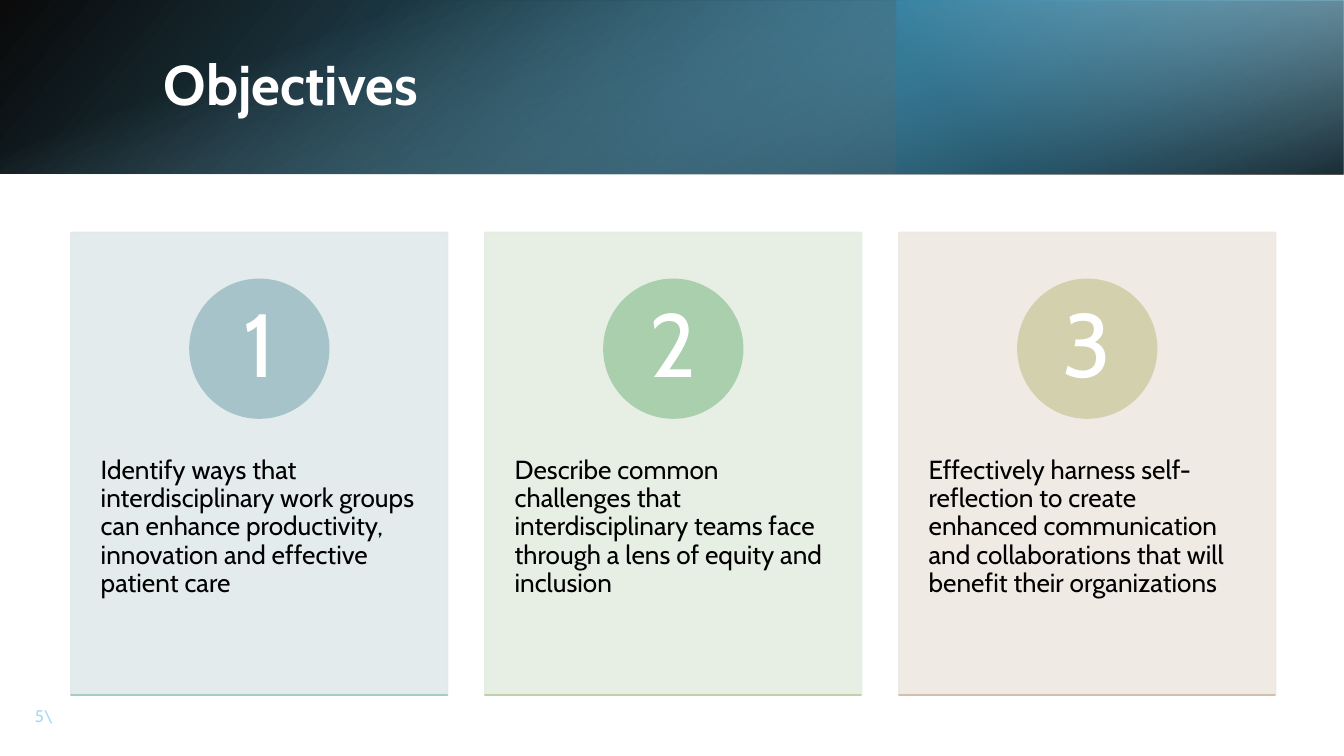
from lxml import etree
from pptx import Presentation
from pptx.dml.color import RGBColor
from pptx.enum import shapes, text
from pptx.oxml.ns import qn
from pptx.util import Inches, Pt

hue = RGBColor.from_string
KIND = shapes.MSO_SHAPE
SIDE = text.PP_ALIGN
ANCHOR = text.MSO_ANCHOR


def write(box, words, size, color="000000", bold=False, align=SIDE.LEFT,
          anchor=ANCHOR.MIDDLE, space=0.9, pad=(0.1, 0.05)):
    frame = box.text_frame
    frame.word_wrap = True
    frame.auto_size = text.MSO_AUTO_SIZE.NONE
    frame.vertical_anchor = anchor
    frame.margin_left = frame.margin_right = Inches(pad[0])
    frame.margin_top = frame.margin_bottom = Inches(pad[1])
    line = frame.paragraphs[0]
    line.alignment = align
    line.line_spacing = space
    run = line.add_run()
    run.text = words
    run.font.name = "Cabin"
    run.font.size = Pt(size)
    run.font.bold = bold
    run.font.color.rgb = hue(color)


def draw(kind, at, color=None, alpha=100):
    shape = slide.shapes.add_shape(kind, *map(Inches, at))
    shape.shadow.inherit = False
    if color:
        shape.fill.solid()
        shape.fill.fore_color.rgb = shape.line.color.rgb = hue(color)
        shape.line.width = Pt(1)
        if alpha < 100:
            for node in shape._element.iter(qn("a:srgbClr")):
                etree.SubElement(node, qn("a:alpha"), val=str(alpha * 1000))
    else:
        shape.line.fill.background()
    return shape


# Widescreen slide, 16 to 9
deck = Presentation()
deck.slide_width = Inches(10)
deck.slide_height = deck.slide_width * 9 // 16
slide = deck.slides.add_slide(deck.slide_layouts[5])

# Slide number
mark = slide.shapes.add_textbox(*map(Inches, (0, 5.18, 0.49, 0.3)))
write(mark, "5\\", 9, "A6DAF0", align=SIDE.RIGHT, space=1)

# Header band: three layered gradients, stops as (percent, colour, opacity)
bands = [
    ((0, 0, 10, 1.29), 0, 140, [(0, "000000", 96), (100, "4FB6E1", 100)]),
    ((6.67, 0, 3.33, 1.29), 180, 140, [(19, "1D83AE", 68), (100, "A6DAF0", 79)]),
    ((4.35, -4.35, 1.29, 10), 90, 340, [(23, "A6DAF0", 0), (99, "000000", 74)]),
]
for at, turn, angle, stops in bands:
    band = draw(KIND.RECTANGLE, at)
    band.rotation = turn
    if not turn:
        band._element.spPr.xfrm.set("flipH", "1")
    band.fill.gradient()
    band.fill.gradient_angle = 360 - angle
    for stop, (place, color, _) in zip(band.fill.gradient_stops, stops):
        stop.position = place / 100
        stop.color.rgb = hue(color)
    for node, (_, _, alpha) in zip(band._element.iter(qn("a:srgbClr")), stops):
        etree.SubElement(node, qn("a:alpha"), val=str(alpha * 1000))

# Title, brought in front of the band
title = slide.shapes.title
title.left, title.top, title.width, title.height = map(Inches, (1.12, 0.29, 8.24, 0.72))
write(title, "Objectives", 30, "FFFFFF", bold=True)
slide.shapes._spTree.append(title._element)

# Objective cards: card, circle and base line colours, then wording
cards = [
    ("E1E9EC", "A6C3CA", "A8CCBF", "Identify ways that interdisciplinary work groups "
     "can enhance productivity, innovation and effective patient care"),
    ("E5EEE2", "A9CFAC", "BED1AB", "Describe common challenges that interdisciplinary "
     "teams face through a lens of equity and inclusion"),
    ("EFE8E3", "D3D0AD", "D5BDAF", "Effectively harness self-reflection to create enhanced "
     "communication and collaborations that will benefit their organizations"),
]
wide, disc, label = 2.8, 1.03, 0.73
for i, (back, ring, base, words) in enumerate(cards):
    left = 0.53 + i * 3.08
    mid = left + wide / 2
    draw(KIND.RECTANGLE, (left, 1.73, wide, 3.44), back, 90)
    body = slide.shapes.add_textbox(*map(Inches, (left, 3.04, wide, 2.06)))
    write(body, words, 14, anchor=ANCHOR.TOP, pad=(0.22, 0.36))
    draw(KIND.OVAL, (mid - disc / 2, 2.08, disc, disc), ring)
    count = slide.shapes.add_textbox(*map(Inches, (mid - label / 2, 2.23, label, label)))
    write(count, str(i + 1), 48, "FFFFFF", align=SIDE.CENTER, pad=(0.08, 0.01))
    draw(KIND.RECTANGLE, (left, 5.17, wide, 0), base)

deck.save("out.pptx")
